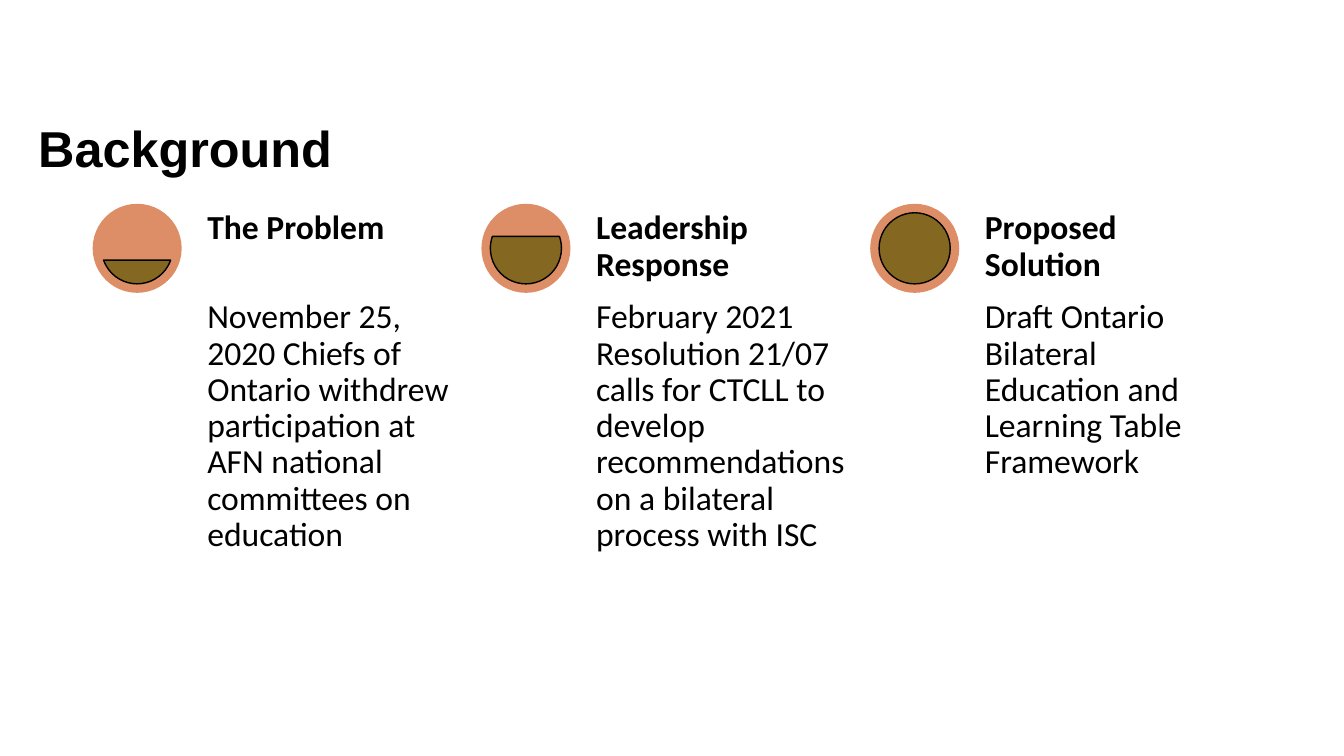
"""Build the Background slide: three stages, each with a filling dial."""
from dataclasses import dataclass

from pptx import Presentation
from pptx.dml.color import RGBColor
from pptx.enum.shapes import MSO_SHAPE as Preset
from pptx.enum.text import MSO_ANCHOR as Anchor, PP_ALIGN as Align
from pptx.slide import Slide
from pptx.util import Pt

BLACK, CORAL, OLIVE = "000000", "DE8E67", "846721"
FIRST_LEFT, TOP, PITCH = 66.2, 145.6, 277.7
DIAL_SIZE, DIAL_INSET = 63.6, 6.4
TEXT_OFFSET, TEXT_WIDTH, BODY_HEIGHT = 76.9, 187.9, 267.3


@dataclass(frozen=True)
class Stage:
    """A column with its chord angles, heading and body."""
    chord: tuple[float, float]
    heading: str
    body: str


@dataclass(frozen=True)
class TextStyle:
    """Font and box margins of a text block."""
    font: str
    size: float
    bold: bool
    side_margin: float
    top_margin: float


TITLE = TextStyle("Arial", 36, True, 7.2, 3.6)
HEADING = TextStyle("Calibri", 24, True, 5, 5)
BODY = TextStyle("Calibri", 24, False, 5, 5)

STAGES = (
    Stage((11.68, 96.32), "The Problem",
          "November 25, 2020 Chiefs of Ontario withdrew participation at "
          "AFN national committees on education"),
    Stage((204.32, 119.68), "Leadership Response",
          "February 2021 Resolution 21/07 calls for CTCLL to develop "
          "recommendations on a bilateral process with ISC"),
    Stage((162, 162), "Proposed Solution",
          "Draft Ontario Bilateral Education and Learning Table Framework"),
)


def color(value: str) -> RGBColor:
    """Turn a hex string into a colour."""
    return RGBColor.from_string(value)


def add_text(page: Slide, text: str, style: TextStyle,
             left: float, top: float, width: float, height: float) -> None:
    """Add a wrapped, top-anchored text box."""
    box = page.shapes.add_textbox(Pt(left), Pt(top), Pt(width), Pt(height))
    frame = box.text_frame
    frame.word_wrap = True
    frame.vertical_anchor = Anchor.TOP
    frame.margin_left = frame.margin_right = Pt(style.side_margin)
    frame.margin_top = frame.margin_bottom = Pt(style.top_margin)
    para = frame.paragraphs[0]
    para.alignment = Align.LEFT
    para.line_spacing = 0.9
    span = para.add_run()
    span.text = text
    span.font.name = style.font
    span.font.size = Pt(style.size)
    span.font.bold = style.bold
    span.font.color.rgb = color(BLACK)


def add_dial(page: Slide, left: float, chord: tuple[float, float]) -> None:
    """Add a disc with an outlined chord showing its level."""
    disc = page.shapes.add_shape(
        Preset.OVAL, Pt(left), Pt(TOP), Pt(DIAL_SIZE), Pt(DIAL_SIZE))
    disc.line.fill.background()
    level_size = DIAL_SIZE - 2 * DIAL_INSET
    level = page.shapes.add_shape(
        Preset.CHORD, Pt(left + DIAL_INSET), Pt(TOP + DIAL_INSET),
        Pt(level_size), Pt(level_size))
    level.adjustments[0], level.adjustments[1] = chord
    level.line.color.rgb = color(BLACK)
    level.line.width = Pt(1)
    for shape, fill in ((disc, CORAL), (level, OLIVE)):
        shape.shadow.inherit = False
        shape.fill.solid()
        shape.fill.fore_color.rgb = color(fill)


def add_stage(page: Slide, index: int, stage: Stage) -> None:
    """Add one column of the row."""
    left = FIRST_LEFT + index * PITCH
    text_left = left + TEXT_OFFSET
    add_dial(page, left, stage.chord)
    add_text(page, stage.body, BODY,
             text_left, TOP + DIAL_SIZE, TEXT_WIDTH, BODY_HEIGHT)
    add_text(page, stage.heading, HEADING,
             text_left, TOP, TEXT_WIDTH, DIAL_SIZE)


def main() -> None:
    """Build and save the deck."""
    deck = Presentation()
    deck.slide_width, deck.slide_height = Pt(960), Pt(540)
    page = deck.slides.add_slide(deck.slide_layouts[6])
    add_text(page, "Background", TITLE, 20.2, 85, 624.2, 61.2)
    for index, stage in enumerate(STAGES):
        add_stage(page, index, stage)
    deck.save("out.pptx")


if __name__ == "__main__":
    main()
